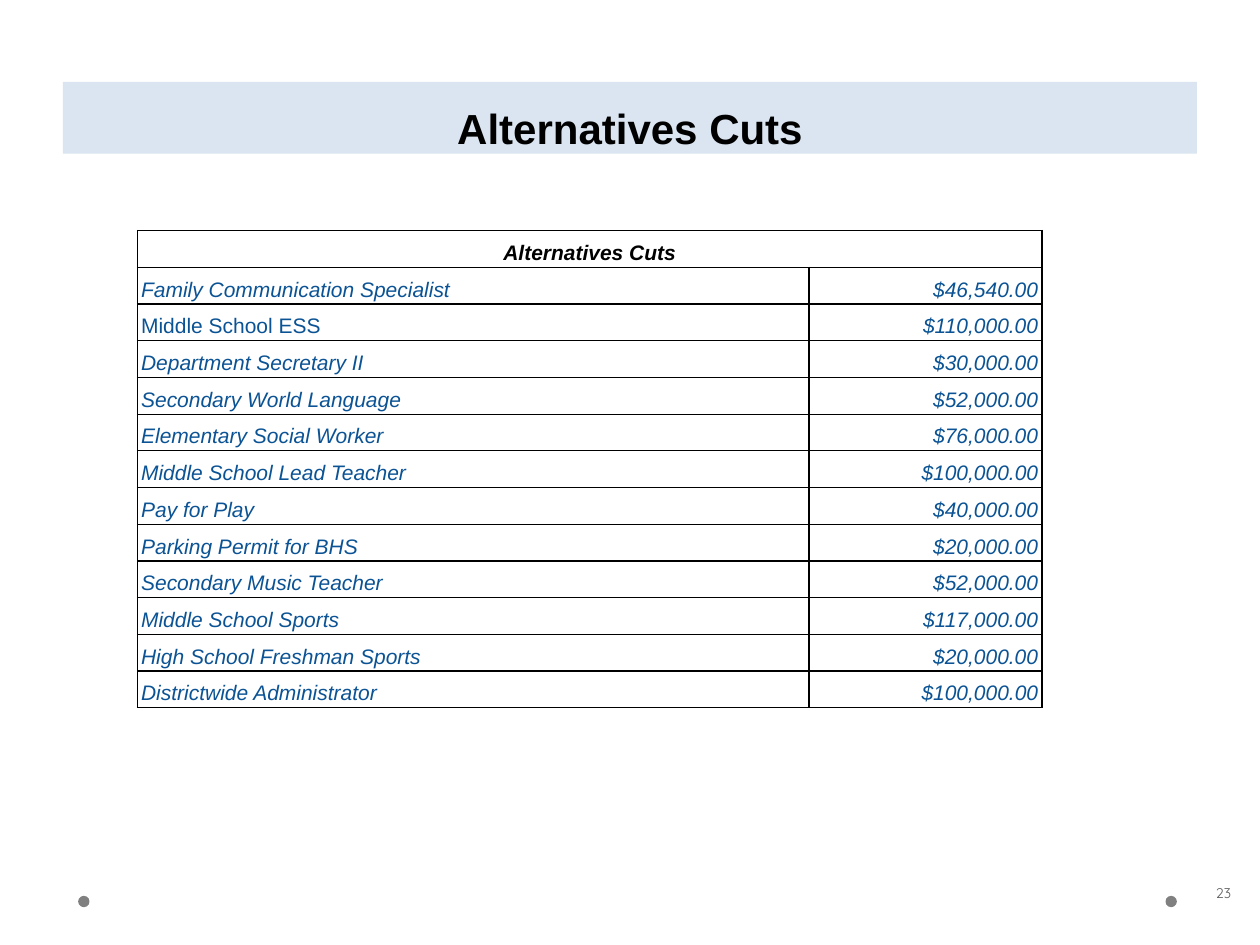
"""Build the Alternatives Cuts slide with its table of proposed savings."""
import pptx
import pptx.dml.color
import pptx.enum.shapes
import pptx.enum.text
import pptx.oxml
import pptx.oxml.ns
import pptx.util
from pptx.util import Inches

ALIGN = pptx.enum.text.PP_ALIGN
ANCHOR = pptx.enum.text.MSO_ANCHOR
SHAPE = pptx.enum.shapes.MSO_SHAPE

TITLE = "Alternatives Cuts"
PAGE_NUMBER = "23"
CUTS = [
    ("Family Communication Specialist", "$46,540.00"),
    ("Middle School ESS", "$110,000.00"),
    ("Department Secretary II", "$30,000.00"),
    ("Secondary World Language", "$52,000.00"),
    ("Elementary Social Worker", "$76,000.00"),
    ("Middle School Lead Teacher", "$100,000.00"),
    ("Pay for Play", "$40,000.00"),
    ("Parking Permit for BHS", "$20,000.00"),
    ("Secondary Music Teacher", "$52,000.00"),
    ("Middle School Sports", "$117,000.00"),
    ("High School Freshman Sports", "$20,000.00"),
    ("Districtwide Administrator", "$100,000.00"),
]
UPRIGHT = {"Middle School ESS"}
COLUMN_WIDTHS = (5.33, 1.85)
TABLE_LEFT, TABLE_TOP, TABLE_HEIGHT = 1.09, 1.83, 3.79
BLACK, BLUE, GRAY, DARK_GRAY, PALE_BLUE = "000000", "0B5394", "808080", "595959", "DAE5F1"


def color(value):
    return pptx.dml.color.RGBColor.from_string(value)


def write(frame, text, size=12, font="Arial", ink=BLACK, bold=False, italic=False,
          align=ALIGN.LEFT, spacing=None):
    para = frame.paragraphs[0]
    para.alignment = align
    if spacing:
        para.line_spacing = spacing
    span = para.add_run()
    span.text = text
    span.font.size = pptx.util.Pt(size)
    span.font.name = font
    span.font.color.rgb = color(ink)
    span.font.bold = bold
    span.font.italic = italic


def set_frame(frame, left, top, right, bottom):
    frame.word_wrap = True
    frame.vertical_anchor = ANCHOR.MIDDLE
    frame.margin_left, frame.margin_top = Inches(left), Inches(top)
    frame.margin_right, frame.margin_bottom = Inches(right), Inches(bottom)


def add_filled(page, kind, left, top, width, height, fill):
    box = page.shapes.add_shape(kind, Inches(left), Inches(top), Inches(width), Inches(height))
    box.shadow.inherit = False
    box.fill.solid()
    box.fill.fore_color.rgb = color(fill)
    box.line.fill.background()
    return box


def add_borders(cell):
    properties = cell._tc.get_or_add_tcPr()
    namespace = pptx.oxml.ns.nsdecls("a")
    width = pptx.util.Pt(0.83)
    for index, side in enumerate(("lnL", "lnR", "lnT", "lnB")):
        properties.insert(index, pptx.oxml.parse_xml(
            f'<a:{side} {namespace} w="{width}"><a:solidFill><a:srgbClr val="{BLACK}"/>'
            f'</a:solidFill><a:prstDash val="solid"/></a:{side}>'))


def format_cell(cell):
    cell.fill.background()
    cell.vertical_anchor = ANCHOR.BOTTOM
    cell.margin_left = cell.margin_right = Inches(0.03)
    cell.margin_top = cell.margin_bottom = Inches(0.02)
    add_borders(cell)


def add_cuts_table(page):
    count = len(CUTS) + 1
    table = page.shapes.add_table(
        count, 2, Inches(TABLE_LEFT), Inches(TABLE_TOP),
        Inches(sum(COLUMN_WIDTHS)), Inches(TABLE_HEIGHT)).table
    table.first_row = table.horz_banding = False
    for column, width in zip(table.columns, COLUMN_WIDTHS):
        column.width = Inches(width)
    for row in table.rows:
        row.height = Inches(TABLE_HEIGHT / count)
        for cell in row.cells:
            format_cell(cell)
    heading = table.cell(0, 0)
    heading.merge(table.cell(0, 1))
    write(heading.text_frame, TITLE, bold=True, italic=True, align=ALIGN.CENTER, spacing=1.15)
    for index, cut in enumerate(CUTS, start=1):
        for column, (text, align) in enumerate(zip(cut, (ALIGN.LEFT, ALIGN.RIGHT))):
            write(table.cell(index, column).text_frame, text, ink=BLUE,
                  italic=text not in UPRIGHT, align=align, spacing=1.15)


def main():
    deck = pptx.Presentation()
    deck.slide_width, deck.slide_height = Inches(10), Inches(7.5)
    page = deck.slides.add_slide(deck.slide_layouts[6])

    for left in (9.25, 0.62):
        add_filled(page, SHAPE.OVAL, left, 7.11, 0.09, 0.09, GRAY)

    number = page.shapes.add_textbox(Inches(9.27), Inches(6.8), Inches(0.6), Inches(0.57))
    set_frame(number.text_frame, 0.1, 0.1, 0.1, 0.1)
    write(number.text_frame, PAGE_NUMBER, size=8, font="Quicksand", ink=DARK_GRAY,
          align=ALIGN.RIGHT)

    banner = add_filled(page, SHAPE.RECTANGLE, 0.5, 0.65, 9, 0.57, PALE_BLUE)
    set_frame(banner.text_frame, 0.1, 0.15, 0.1, 0)
    write(banner.text_frame, TITLE, size=24, bold=True, align=ALIGN.CENTER)

    add_cuts_table(page)
    deck.save("out.pptx")


if __name__ == "__main__":
    main()
